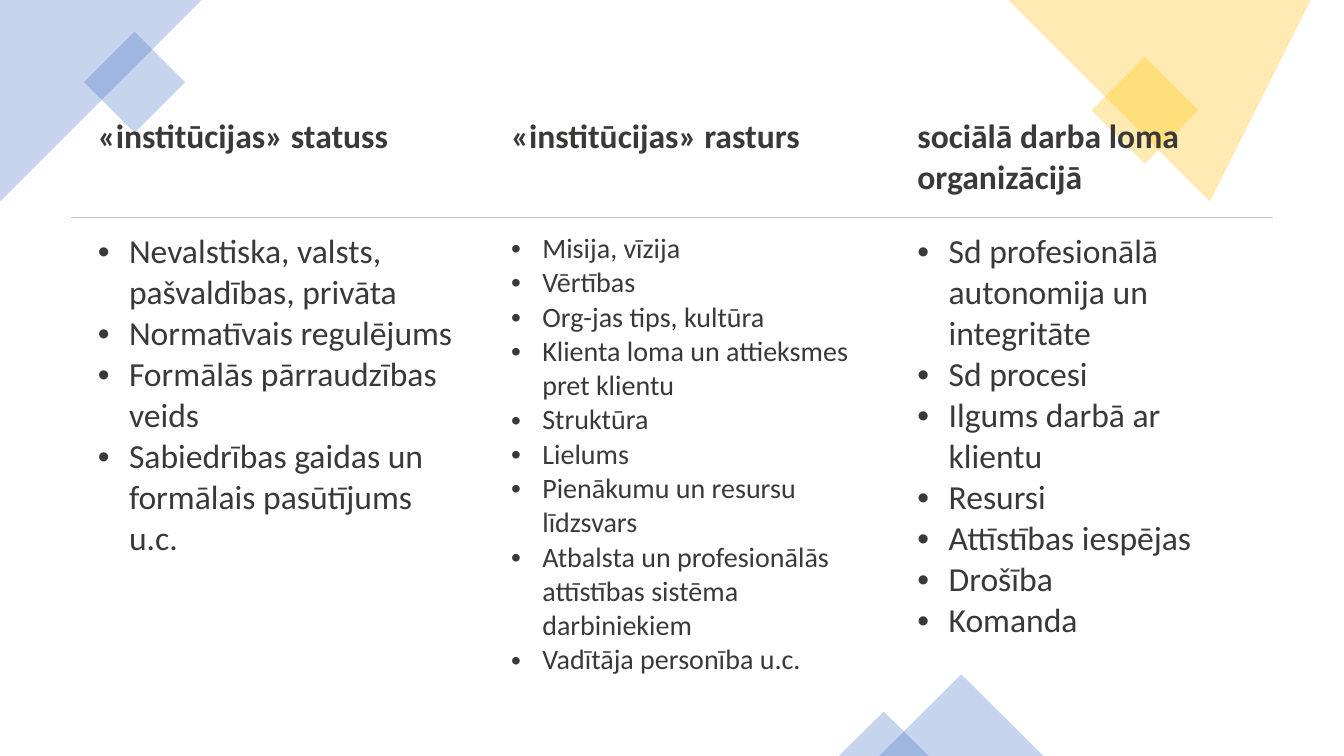
"""Build a slide with a three-column table on social work in institutions."""
from dataclasses import dataclass

from lxml.etree import SubElement
from pptx import Presentation
from pptx.dml.color import RGBColor
from pptx.enum.shapes import MSO_SHAPE
from pptx.oxml import parse_xml
from pptx.oxml.ns import nsdecls, qn
from pptx.shapes.autoshape import Shape
from pptx.slide import Slide
from pptx.table import _Cell
from pptx.text.text import TextFrame
from pptx.util import Inches, Pt

COLORS = {"blue": "4472C4", "yellow": "FFC000", "text": "3B3838", "rule": "C7C6C1"}
FONT = "Calibri"
NO_STYLE = "{2D5ABB26-0587-4C30-8999-92F81FD0307C}"


@dataclass(frozen=True)
class Corner:
    """A polygon that fills a corner of the slide."""
    color: str
    points: tuple[tuple[float, float], ...]


@dataclass(frozen=True)
class Accent:
    """A preset shape that decorates the slide edge."""
    color: str
    preset: MSO_SHAPE
    left: float
    top: float
    width: float
    height: float
    rotation: float = 0


@dataclass(frozen=True)
class Topic:
    """One table column with its heading and points."""
    heading: str
    width: float
    size: float
    points: tuple[str, ...]


BLUE_CORNER = Corner("blue", ((0, 0), (1.53, 0), (1.83, 0.3), (0.41, 1.71), (0, 1.3)))
YELLOW_CORNER = Corner("yellow", ((10.23, 0), (13.33, 0), (13.33, 0.28), (11.93, 1.62)))
DECORATIONS = (
    BLUE_CORNER,
    Accent("blue", MSO_SHAPE.RECTANGLE, 0.98, 0.46, 0.71, 0.71, 315),
    Accent("yellow", MSO_SHAPE.RECTANGLE, 10.98, 0.72, 0.75, 0.75, 315),
    YELLOW_CORNER,
    Accent("blue", MSO_SHAPE.ISOSCELES_TRIANGLE, 8.72, 6.69, 1.63, 0.81),
    Accent("blue", MSO_SHAPE.ISOSCELES_TRIANGLE, 8.32, 7.06, 0.89, 0.44),
)
TOPICS = (
    Topic("«institūcijas» statuss", 4.1, 24, (
        "Nevalstiska, valsts, pašvaldības, privāta",
        "Normatīvais regulējums",
        "Formālās pārraudzības veids",
        "Sabiedrības gaidas un formālais pasūtījums u.c.",
    )),
    Topic("«institūcijas» rasturs", 4.03, 20, (
        "Misija, vīzija",
        "Vērtības",
        "Org-jas tips, kultūra",
        "Klienta loma un attieksmes pret klientu",
        "Struktūra",
        "Lielums",
        "Pienākumu un resursu līdzsvars",
        "Atbalsta un profesionālās attīstības sistēma darbiniekiem",
        "Vadītāja personība u.c.",
    )),
    Topic("sociālā darba loma organizācijā", 3.8, 24, (
        "Sd profesionālā autonomija un integritāte",
        "Sd procesi",
        "Ilgums darbā ar klientu",
        "Resursi",
        "Attīstības iespējas",
        "Drošība",
        "Komanda",
    )),
)


def paint(shape: Shape, color: str) -> None:
    """Give a shape a 30 % opaque fill and no line or shadow."""
    shape.shadow.inherit = False
    shape.line.fill.background()
    shape.fill.solid()
    shape.fill.fore_color.rgb = RGBColor.from_string(COLORS[color])
    for fill_color in shape._element.spPr.iter(qn("a:srgbClr")):
        SubElement(fill_color, qn("a:alpha"), val="30000")


def draw_decoration(slide: Slide, decoration: Corner | Accent) -> None:
    """Draw a corner polygon or a preset accent."""
    if isinstance(decoration, Corner):
        start, *rest = decoration.points
        outline = slide.shapes.build_freeform(*start, scale=Inches(1))
        outline.add_line_segments(rest, close=True)
        shape = outline.convert_to_shape()
    else:
        box = (decoration.left, decoration.top, decoration.width, decoration.height)
        shape = slide.shapes.add_shape(decoration.preset, *map(Inches, box))
        shape.rotation = decoration.rotation
    paint(shape, decoration.color)


def add_text(frame: TextFrame, text: str, *, size: float = 24, bold: bool = False,
             bullet: bool = False) -> None:
    """Append a formatted paragraph, using the empty first one when free."""
    paragraph = frame.paragraphs[0] if not frame.text else frame.add_paragraph()
    run = paragraph.add_run()
    run.text = text
    run.font.name = FONT
    run.font.size = Pt(size)
    run.font.bold = bold
    run.font.color.rgb = RGBColor.from_string(COLORS["text"])
    if bullet:
        properties = paragraph._p.get_or_add_pPr()
        properties.set("marL", str(Inches(0.31)))
        properties.set("indent", str(-Inches(0.31)))
        SubElement(properties, qn("a:buFont"), typeface="Arial")
        SubElement(properties, qn("a:buChar"), char="•")


def format_cell(cell: _Cell, rule_side: str) -> None:
    """Set a cell's margins, clear its fill and rule one side."""
    cell.margin_left, cell.margin_right = Inches(0.27), Inches(0.2)
    cell.margin_top = cell.margin_bottom = Inches(0.14)
    cell.fill.background()
    rule = parse_xml(
        f'<a:ln{rule_side} {nsdecls("a")} w="{Pt(0.75)}"><a:solidFill>'
        f'<a:srgbClr val="{COLORS["rule"]}"/></a:solidFill></a:ln{rule_side}>')
    cell._tc.get_or_add_tcPr().insert(0, rule)


def add_topics(slide: Slide) -> None:
    """Add the table of topics."""
    row_heights = (1.14, 4.32)
    width = sum(topic.width for topic in TOPICS)
    table = slide.shapes.add_table(
        len(row_heights), len(TOPICS), Inches(0.7), Inches(1.02),
        Inches(width), Inches(sum(row_heights))).table
    table._tbl.tblPr.find(qn("a:tableStyleId")).text = NO_STYLE
    table.first_row = table.horz_banding = False
    for row, height in zip(table.rows, row_heights):
        row.height = Inches(height)
    for index, topic in enumerate(TOPICS):
        table.columns[index].width = Inches(topic.width)
        heading, body = table.cell(0, index), table.cell(1, index)
        format_cell(heading, "B")
        format_cell(body, "T")
        add_text(heading.text_frame, topic.heading, bold=True)
        for point in topic.points:
            add_text(body.text_frame, point, size=topic.size, bullet=True)


def main() -> None:
    """Build and save the presentation."""
    presentation = Presentation()
    presentation.slide_width, presentation.slide_height = Inches(13.33), Inches(7.5)
    slide = presentation.slides.add_slide(presentation.slide_layouts[6])
    for decoration in DECORATIONS:
        draw_decoration(slide, decoration)
    add_topics(slide)
    presentation.save("out.pptx")


if __name__ == "__main__":
    main()
